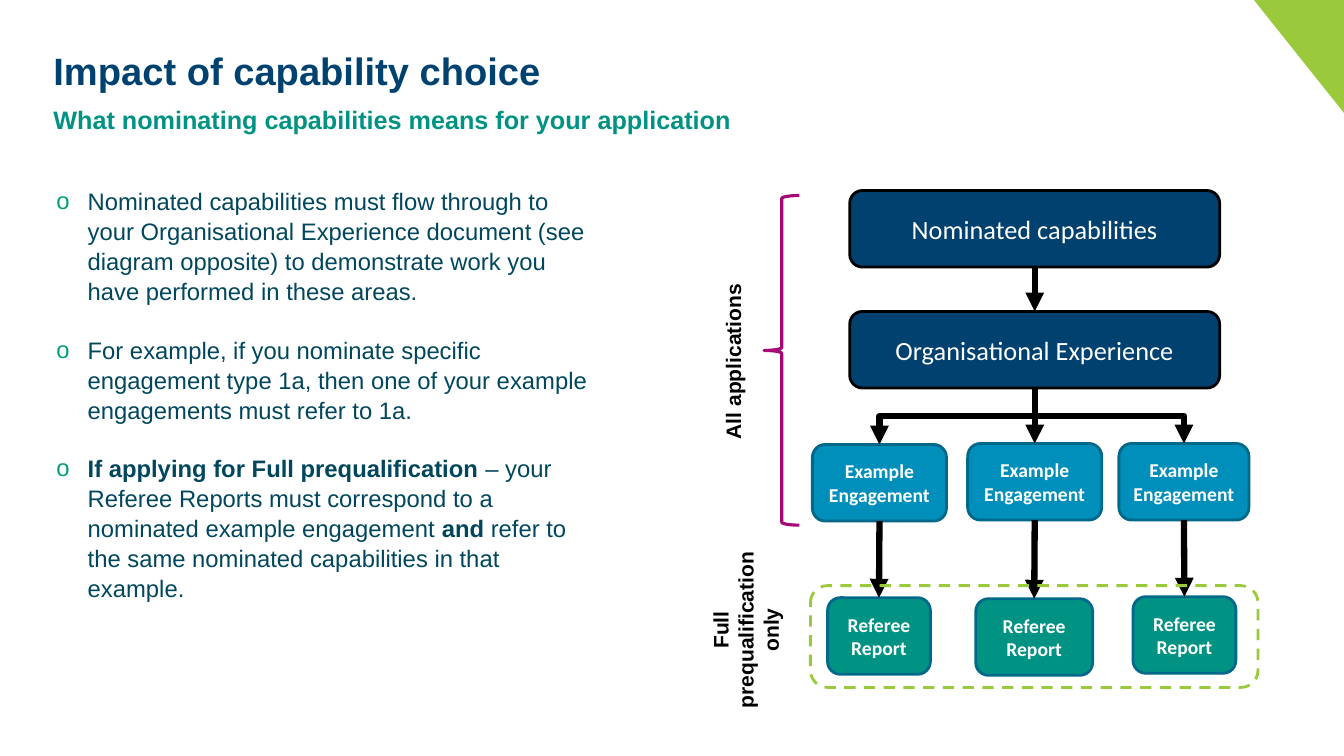
from dataclasses import dataclass
from typing import Optional

from lxml.etree import SubElement
from pptx import Presentation
from pptx.dml.color import RGBColor
from pptx.enum.dml import MSO_LINE
from pptx.enum.shapes import MSO_CONNECTOR, MSO_SHAPE
from pptx.enum.text import MSO_ANCHOR, MSO_AUTO_SIZE, PP_ALIGN
from pptx.oxml.ns import qn
from pptx.util import Emu, Inches, Pt

CELL = Inches(0.1)
COLUMNS, ROWS = 133.33, 75
NAVY, TEAL, BLUE, INK = "00416F", "009383", "008EBA", "00475D"
EDGE, LIME, PLUM, BLACK, WHITE = "00698A", "9ACA3C", "A50776", "000000", "FFFFFF"


@dataclass(frozen=True)
class Area:
    """A rectangle in grid columns and rows."""
    column: float
    row: float
    columns: float
    rows: float

    def emu(self):
        return [cells(n) for n in (self.column, self.row, self.columns, self.rows)]


@dataclass(frozen=True)
class Style:
    """The look of one run of text."""
    size: float
    color: str
    bold: bool = False
    font: str = "Arial"


@dataclass(frozen=True)
class Stage:
    """A kind of box in the flow."""
    lines: tuple
    fill: str
    edge: str
    style: Style


@dataclass(frozen=True)
class Branch:
    """One engagement with the report that follows it."""
    engagement: Area
    report: Area


HEADING = Style(18.8, WHITE, font="Calibri")
DETAIL = Style(14, WHITE, True, "Calibri")
LABEL = Style(15, BLACK, True)
NOMINATED = Stage(("Nominated capabilities",), NAVY, BLACK, HEADING)
EXPERIENCE = Stage(("Organisational Experience",), NAVY, BLACK, HEADING)
ENGAGEMENT = Stage(("Example", "Engagement"), BLUE, EDGE, DETAIL)
REPORT = Stage(("Referee Report",), TEAL, EDGE, DETAIL)

BRANCHES = (
    Branch(Area(80.6, 44.1, 13.3, 7.6), Area(82.1, 59.3, 10.2, 7.6)),
    Branch(Area(96, 44, 13.3, 7.6), Area(96.8, 59.4, 11.6, 7.6)),
    Branch(Area(111, 44, 12.9, 7.6), Area(112.4, 59.2, 10.2, 7.6)),
)
POINTS = (
    (("Nominated capabilities must flow through to your Organisational Experience "
      "document (see diagram opposite) to demonstrate work you have performed in "
      "these areas.", False),),
    (("For example, if you nominate specific engagement type 1a, then one of your "
      "example engagements must refer to 1a.", False),),
    (("If applying for Full prequalification ", True),
     ("– your Referee Reports must correspond to a nominated example engagement ", False),
     ("and", True),
     (" refer to the same nominated capabilities in that example.", False)),
)


def cells(count: float) -> Emu:
    """Turn grid cells into a length."""
    return Emu(round(count * CELL))


def color(code: str) -> RGBColor:
    """Turn a hex string into a colour."""
    return RGBColor.from_string(code)


def add_run(paragraph, text: str, style: Style) -> None:
    """Append one styled run."""
    run = paragraph.add_run()
    run.text = text
    run.font.name, run.font.size, run.font.bold = style.font, Pt(style.size), style.bold
    run.font.color.rgb = color(style.color)


def place(holder, area: Area, insets=(0, 0, 0, 0)):
    """Move a placeholder and return its prepared text frame."""
    holder.left, holder.top, holder.width, holder.height = area.emu()
    frame = holder.text_frame
    frame.word_wrap, frame.auto_size = True, MSO_AUTO_SIZE.NONE
    frame.vertical_anchor = MSO_ANCHOR.TOP
    frame.margin_left, frame.margin_top, frame.margin_right, frame.margin_bottom = map(
        cells, insets)
    return frame


def add_heading(holder, area: Area, text: str, style: Style) -> None:
    """Fill a placeholder with one unbulleted line."""
    paragraph = place(holder, area).paragraphs[0]
    paragraph.alignment, paragraph.space_before = PP_ALIGN.LEFT, Pt(0)
    properties = paragraph._p.get_or_add_pPr()
    properties.set("marL", "0")
    properties.set("indent", "0")
    SubElement(properties, qn("a:buNone"))
    add_run(paragraph, text, style)


def add_points(holder, area: Area) -> None:
    """Fill a placeholder with the bulleted points."""
    frame = place(holder, area, (0, 0.5, 1, 0.5))
    for index, runs in enumerate(POINTS):
        paragraph = frame.add_paragraph() if index else frame.paragraphs[0]
        paragraph.alignment, paragraph.line_spacing = PP_ALIGN.LEFT, 1.05
        paragraph.space_before, paragraph.space_after = Pt(0), Pt(20.4)
        properties = paragraph._p.get_or_add_pPr()
        properties.set("marL", str(cells(3.1)))
        properties.set("indent", str(-cells(3.1)))
        bullet_color = SubElement(properties, qn("a:buClr"))
        SubElement(bullet_color, qn("a:srgbClr"), val="009F7A")
        SubElement(properties, qn("a:buFont"), typeface="Arial")
        SubElement(properties, qn("a:buChar"), char="o")
        for text, bold in runs:
            add_run(paragraph, text, Style(17, INK, bold))


def add_outline(shapes, preset, area: Area, edge: str, width: float = 2,
                fill: Optional[str] = None):
    """Draw a preset shape, hollow unless a fill is given."""
    outline = shapes.add_shape(preset, *area.emu())
    outline.shadow.inherit = False
    outline.line.color.rgb, outline.line.width = color(edge), Pt(width)
    if fill:
        outline.fill.solid()
        outline.fill.fore_color.rgb = color(fill)
    else:
        outline.fill.background()
    return outline


def add_stage(shapes, stage: Stage, area: Area):
    """Draw one box of the flow with its text."""
    box = add_outline(shapes, MSO_SHAPE.ROUNDED_RECTANGLE, area, stage.edge, fill=stage.fill)
    frame = box.text_frame
    frame.word_wrap, frame.vertical_anchor = True, MSO_ANCHOR.MIDDLE
    paragraph = frame.paragraphs[0]
    paragraph.alignment = PP_ALIGN.CENTER
    for index, line in enumerate(stage.lines):
        if index:
            paragraph.add_line_break()
        add_run(paragraph, line, stage.style)
    return box


def add_arrow(shapes, source, target, bent: bool = False) -> None:
    """Join the bottom of one box to the top of another."""
    kind = MSO_CONNECTOR.ELBOW if bent else MSO_CONNECTOR.STRAIGHT
    arrow = shapes.add_connector(kind, 0, 0, 0, 0)
    arrow.begin_connect(source, 2)
    arrow.end_connect(target, 0)
    if bent:
        start_x, start_y, end_x, end_y = arrow.begin_x, arrow.begin_y, arrow.end_x, arrow.end_y
        across, down = abs(end_x - start_x), end_y - start_y
        arrow.left, arrow.top = (start_x + end_x - down) // 2, (start_y + end_y - across) // 2
        arrow.width, arrow.height = down, across
        transform = arrow._element.spPr.find(qn("a:xfrm"))
        rightward = end_x > start_x
        transform.set("rot", "16200000" if rightward else "5400000")
        transform.set("flipH", "1" if rightward else "0")
    arrow.line.color.rgb, arrow.line.width = color(BLACK), Pt(4.5)
    SubElement(arrow.line._get_or_add_ln(), qn("a:tailEnd"), type="triangle")
    SubElement(arrow._element.spPr, qn("a:effectLst"))


def add_side_label(shapes, area: Area, text: str, alignment) -> None:
    """Write a label that reads upwards."""
    label = shapes.add_textbox(*area.emu())
    label.rotation = 270
    label.text_frame.word_wrap = True
    paragraph = label.text_frame.paragraphs[0]
    paragraph.alignment = alignment
    add_run(paragraph, text, LABEL)


def add_flow(shapes) -> None:
    """Draw the flow from capabilities to referee reports."""
    nominated = add_stage(shapes, NOMINATED, Area(84.3, 18.9, 36.7, 7.6))
    experience = add_stage(shapes, EXPERIENCE, Area(84.3, 30.9, 36.7, 7.6))
    add_arrow(shapes, nominated, experience)
    for index, branch in enumerate(BRANCHES):
        report = add_stage(shapes, REPORT, branch.report)
        engagement = add_stage(shapes, ENGAGEMENT, branch.engagement)
        add_arrow(shapes, engagement, report)
        add_arrow(shapes, experience, engagement, bent=index != 1)
    full_only = add_outline(shapes, MSO_SHAPE.ROUNDED_RECTANGLE,
                            Area(80.4, 58.1, 44.4, 10.1), LIME)
    full_only.line.dash_style = MSO_LINE.DASH
    brace = add_outline(shapes, MSO_SHAPE.LEFT_BRACE, Area(75.8, 19.4, 3.5, 32.7), PLUM, 2.25)
    brace.adjustments[0], brace.adjustments[1] = 0.083, 0.47
    add_side_label(shapes, Area(62.9, 33, 19.6, 3.5), "All applications", PP_ALIGN.LEFT)
    add_side_label(shapes, Area(64.2, 58.2, 19.6, 8.6), "Full prequalification only",
                   PP_ALIGN.CENTER)


def add_corner(shapes) -> None:
    """Draw the triangle in the top right corner."""
    builder = shapes.build_freeform(cells(COLUMNS), 0)
    builder.add_line_segments([(cells(124.4), 0), (cells(COLUMNS), cells(11.2))])
    corner = builder.convert_to_shape()
    corner.shadow.inherit = False
    corner.fill.solid()
    corner.fill.fore_color.rgb = color(LIME)
    corner.line.fill.background()


def main() -> None:
    """Build and save the slide."""
    deck = Presentation()
    deck.slide_width, deck.slide_height = cells(COLUMNS), cells(ROWS)
    slide = deck.slides.add_slide(deck.slide_layouts[3])
    title, subtitle, points = slide.placeholders
    add_heading(title, Area(5.3, 4.7, 81.8, 7), "Impact of capability choice",
                Style(27.2, "00426F", True))
    add_heading(subtitle, Area(5.3, 10.3, 118.6, 3),
                "What nominating capabilities means for your application", Style(18, TEAL, True))
    add_points(points, Area(5.6, 17.9, 54.4, 50.8))
    add_corner(slide.shapes)
    add_flow(slide.shapes)
    deck.save("out.pptx")


if __name__ == "__main__":
    main()
